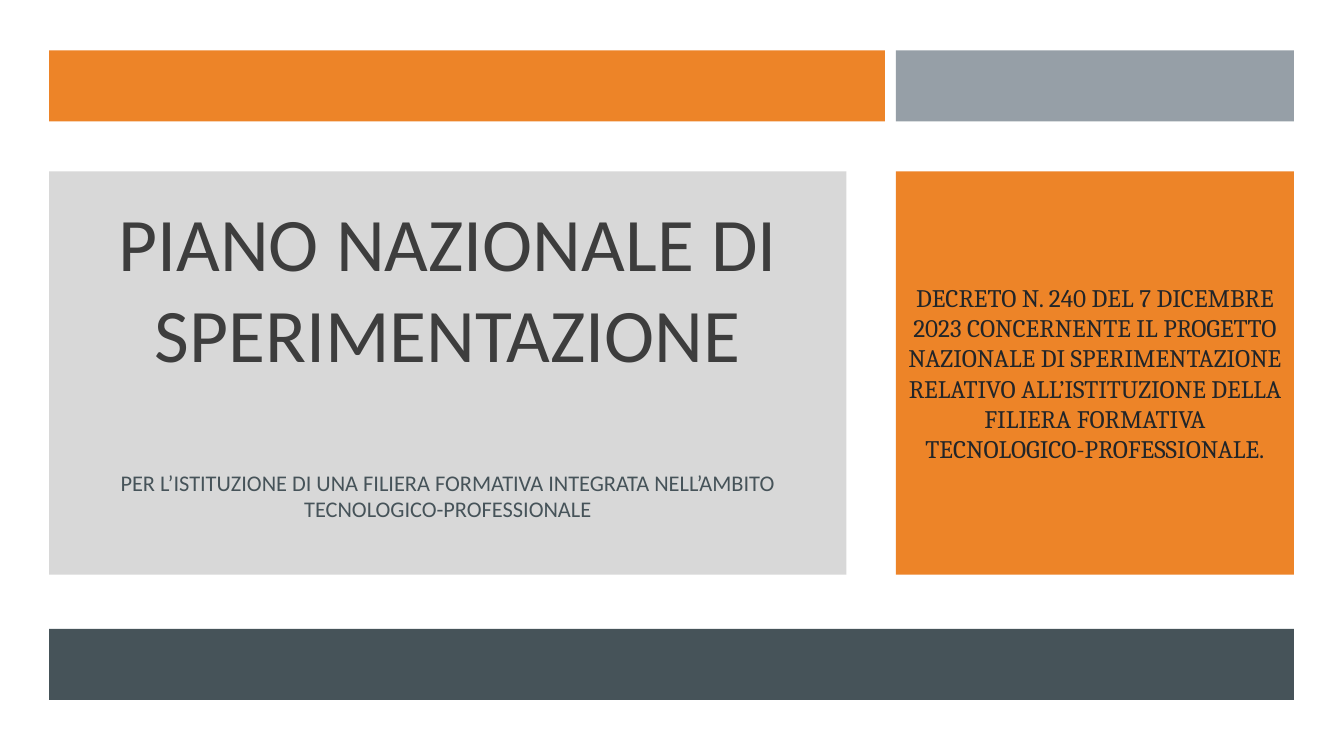
import pptx
import pptx.util
import pptx.dml.color
import pptx.enum.shapes
import pptx.enum.text

Cm = pptx.util.Cm
Pt = pptx.util.Pt

COLOURS = {
    "orange": "ED8428",
    "grey_blue": "969FA7",
    "slate": "465359",
    "panel": "D8D8D8",
    "heading": "3D3D3D",
    "ink": "212529",
}

# Page grid in centimetres
LEFT, RIGHT = 1.24, 32.61
SIDE_LEFT = 22.58
SIDE_WIDTH = RIGHT - SIDE_LEFT
PANEL_TOP, PANEL_HEIGHT = 4.32, 10.16
BAR_HEIGHT = 1.79


def colour(name):
    return pptx.dml.color.RGBColor.from_string(COLOURS[name])


def paint(shape, fill):
    shape.fill.solid()
    shape.fill.fore_color.rgb = colour(fill)
    shape.line.fill.background()


def add_block(slide, box, fill):
    block = slide.shapes.add_shape(
        pptx.enum.shapes.MSO_SHAPE.RECTANGLE, *map(Cm, box))
    block.shadow.inherit = False
    paint(block, fill)
    return block


def write(paragraph, text, *, size, font, ink, before=0):
    paragraph.alignment = pptx.enum.text.PP_ALIGN.CENTER
    paragraph.space_before = Pt(before)
    run = paragraph.add_run()
    run.text = text
    run.font.size = Pt(size)
    run.font.name = font
    run.font.color.rgb = colour(ink)


def prepare_frame(shape):
    frame = shape.text_frame
    frame.word_wrap = True
    frame.auto_size = pptx.enum.text.MSO_AUTO_SIZE.NONE
    frame.vertical_anchor = pptx.enum.text.MSO_ANCHOR.MIDDLE
    return frame


def place_heading(slide, box):
    heading = slide.shapes.title
    heading.left, heading.top, heading.width, heading.height = map(Cm, box)
    paint(heading, "panel")
    frame = prepare_frame(heading)
    frame.margin_bottom = Cm(0.82)
    write(frame.paragraphs[0], "PIANO NAZIONALE DI SPERIMENTAZIONE",
          size=54, font="Calibri", ink="heading")
    write(frame.add_paragraph(),
          "PER L’ISTITUZIONE DI UNA FILIERA FORMATIVA INTEGRATA "
          "NELL’AMBITO TECNOLOGICO-PROFESSIONALE",
          size=16, font="Calibri", ink="slate", before=65)


def place_decree(slide, box):
    frame = prepare_frame(add_block(slide, box, "orange"))
    write(frame.paragraphs[0],
          "DECRETO N. 240 DEL 7 DICEMBRE 2023 CONCERNENTE IL PROGETTO "
          "NAZIONALE DI SPERIMENTAZIONE RELATIVO ALL’ISTITUZIONE DELLA "
          "FILIERA FORMATIVA TECNOLOGICO-PROFESSIONALE.",
          size=18, font="Cambria", ink="ink")


def place_bars(slide, top, bottom_top):
    bars = [
        (LEFT, top, 21.06, "orange"),
        (SIDE_LEFT, top, SIDE_WIDTH, "grey_blue"),
        (LEFT, bottom_top, RIGHT - LEFT, "slate"),
    ]
    for left, bar_top, width, fill in bars:
        add_block(slide, (left, bar_top, width, BAR_HEIGHT), fill)


def main():
    deck = pptx.Presentation()
    deck.slide_width, deck.slide_height = Cm(33.87), Cm(19.05)
    slide = deck.slides.add_slide(deck.slide_layouts.get_by_name("Title Only"))

    # Title panel and decree panel
    place_heading(slide, (LEFT, PANEL_TOP, 20.09, PANEL_HEIGHT))
    place_decree(slide, (SIDE_LEFT, PANEL_TOP, SIDE_WIDTH, PANEL_HEIGHT))

    # Colour bars above and below
    place_bars(slide, 1.27, 15.85)

    deck.save("out.pptx")


if __name__ == "__main__":
    main()
